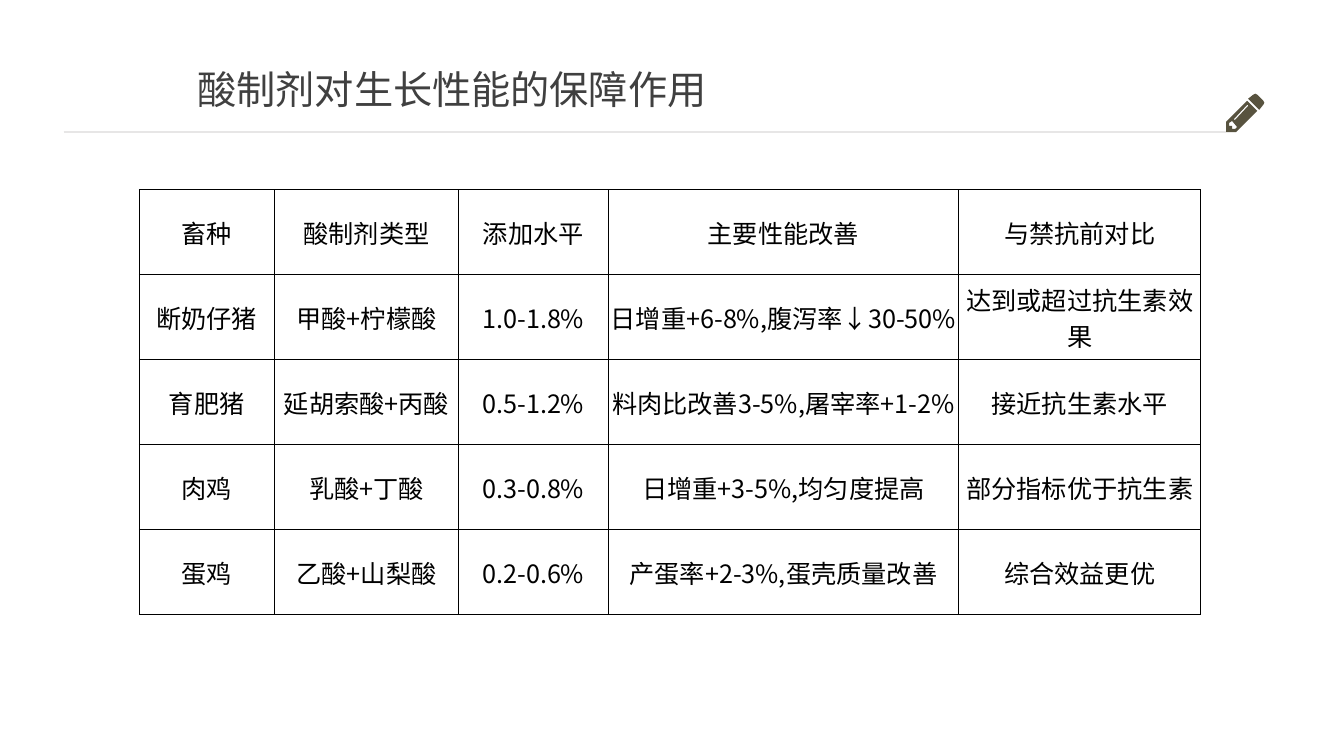
from dataclasses import dataclass

import lxml.etree
import pptx
import pptx.dml.color
import pptx.enum.shapes
import pptx.enum.text
import pptx.oxml.ns
import pptx.util

Inches = pptx.util.Inches
Pt = pptx.util.Pt
Color = pptx.dml.color.RGBColor
Point = tuple[float, float]


@dataclass(frozen=True)
class Theme:
    font: str = "Noto Sans CJK SC"
    title_size: int = 28
    table_size: int = 18
    title_color: str = "404040"
    table_color: str = "000000"
    rule_color: str = "E7E6E6"
    pencil_color: str = "58533F"
    rule_width: float = 2
    border_width: float = 0.5


@dataclass(frozen=True)
class PencilPart:
    """One filled part: its outer contour, followed by any holes."""
    contours: list[list[Point]]


@dataclass(frozen=True)
class AnimalRow:
    animal: str
    acidifier: str
    dosage: str
    improvement: str
    comparison: str

    def texts(self) -> list[str]:
        return [self.animal, self.acidifier, self.dosage, self.improvement, self.comparison]


THEME = Theme()
COLUMN_WIDTHS = [1.34, 1.83, 1.48, 3.48, 2.4]
ROWS = [
    AnimalRow("畜种", "酸制剂类型", "添加水平", "主要性能改善", "与禁抗前对比"),
    AnimalRow("断奶仔猪", "甲酸+柠檬酸", "1.0-1.8%", "日增重+6-8%,腹泻率↓30-50%", "达到或超过抗生素效果"),
    AnimalRow("育肥猪", "延胡索酸+丙酸", "0.5-1.2%", "料肉比改善3-5%,屠宰率+1-2%", "接近抗生素水平"),
    AnimalRow("肉鸡", "乳酸+丁酸", "0.3-0.8%", "日增重+3-5%,均匀度提高", "部分指标优于抗生素"),
    AnimalRow("蛋鸡", "乙酸+山梨酸", "0.2-0.6%", "产蛋率+2-3%,蛋壳质量改善", "综合效益更优"),
]
PENCIL = [
    PencilPart([[(12.45, 0.93), (12.47, 0.94), (12.53, 1), (12.54, 1.02), (12.53, 1.04),
                 (12.49, 1.09), (12.38, 0.98), (12.43, 0.94)]]),
    PencilPart([
        [(12.37, 1), (12.47, 1.1), (12.26, 1.31), (12.16, 1.31), (12.16, 1.21)],
        [(12.38, 1.04), (12.37, 1.04), (12.24, 1.18), (12.24, 1.19), (12.25, 1.19), (12.38, 1.05)],
        [(12.22, 1.2), (12.19, 1.22), (12.19, 1.25), (12.22, 1.25), (12.22, 1.28),
         (12.25, 1.28), (12.27, 1.26)],
    ]),
]
CELL_FORMAT = {
    "margin_left": Inches(0.01),
    "margin_right": Inches(0.01),
    "margin_top": Inches(0.01),
    "margin_bottom": 0,
    "vertical_anchor": pptx.enum.text.MSO_ANCHOR.MIDDLE,
}
TITLE_FORMAT = {
    "word_wrap": True,
    "auto_size": pptx.enum.text.MSO_AUTO_SIZE.SHAPE_TO_FIT_TEXT,
    "vertical_anchor": pptx.enum.text.MSO_ANCHOR.MIDDLE,
}


def apply_format(target, values: dict) -> None:
    for name, value in values.items():
        setattr(target, name, value)


def add_element(parent, tag: str, **attributes: str):
    return lxml.etree.SubElement(parent, pptx.oxml.ns.qn(tag), attributes)


def write_text(paragraph, text: str, size: float, color: str) -> None:
    run = paragraph.add_run()
    run.text = text
    apply_format(run.font, {"name": THEME.font, "size": Pt(size), "bold": False})
    run.font.color.rgb = Color.from_string(color)
    add_element(run.font._element, "a:ea", typeface=THEME.font)


def draw_pencil_part(slide, part: PencilPart) -> None:
    outlines = [[(Inches(x), Inches(y)) for x, y in contour] for contour in part.contours]
    builder = slide.shapes.build_freeform(*outlines[0][0])
    builder.add_line_segments(outlines[0][1:])
    for hole in outlines[1:]:
        builder.move_to(*hole[0])
        builder.add_line_segments(hole[1:])
    shape = builder.convert_to_shape()
    shape.shadow.inherit = False
    shape.fill.solid()
    shape.fill.fore_color.rgb = Color.from_string(THEME.pencil_color)
    shape.line.fill.background()


def draw_rule(slide) -> None:
    rule = slide.shapes.add_connector(
        pptx.enum.shapes.MSO_CONNECTOR.STRAIGHT,
        Inches(0.63), Inches(1.31), Inches(12.16), Inches(1.31))
    rule.line.width = Pt(THEME.rule_width)
    rule.line.color.rgb = Color.from_string(THEME.rule_color)
    add_element(rule._element.spPr, "a:effectLst")


def draw_title(slide, text: str) -> None:
    title = slide.shapes.add_textbox(Inches(1.86), Inches(0.6), Inches(5.48), Inches(0.57))
    apply_format(title.text_frame, TITLE_FORMAT)
    write_text(title.text_frame.paragraphs[0], text, THEME.title_size, THEME.title_color)


def fill_cell(cell, text: str) -> None:
    apply_format(cell, CELL_FORMAT)
    properties = cell._tc.get_or_add_tcPr()
    for side in ("a:lnL", "a:lnR", "a:lnT", "a:lnB"):
        border = add_element(properties, side, w=str(Pt(THEME.border_width)))
        add_element(add_element(border, "a:solidFill"), "a:srgbClr", val=THEME.table_color)
    cell.fill.background()
    paragraph = cell.text_frame.paragraphs[0]
    paragraph.alignment = pptx.enum.text.PP_ALIGN.CENTER
    write_text(paragraph, text, THEME.table_size, THEME.table_color)


def draw_table(slide, rows: list[AnimalRow]) -> None:
    table = slide.shapes.add_table(
        len(rows), len(COLUMN_WIDTHS),
        Inches(1.38), Inches(1.88), Inches(sum(COLUMN_WIDTHS)), Inches(4.22)).table
    apply_format(table, {"first_row": False, "horz_banding": False})
    for column, width in zip(table.columns, COLUMN_WIDTHS):
        column.width = Inches(width)
    for table_row, row in zip(table.rows, rows):
        for cell, text in zip(table_row.cells, row.texts()):
            fill_cell(cell, text)


def main() -> None:
    presentation = pptx.Presentation()
    apply_format(presentation, {"slide_width": Inches(13.33), "slide_height": Inches(7.5)})
    slide = presentation.slides.add_slide(presentation.slide_layouts[6])
    for part in PENCIL:
        draw_pencil_part(slide, part)
    draw_rule(slide)
    draw_title(slide, "酸制剂对生长性能的保障作用")
    draw_table(slide, ROWS)
    presentation.save("out.pptx")


if __name__ == "__main__":
    main()
